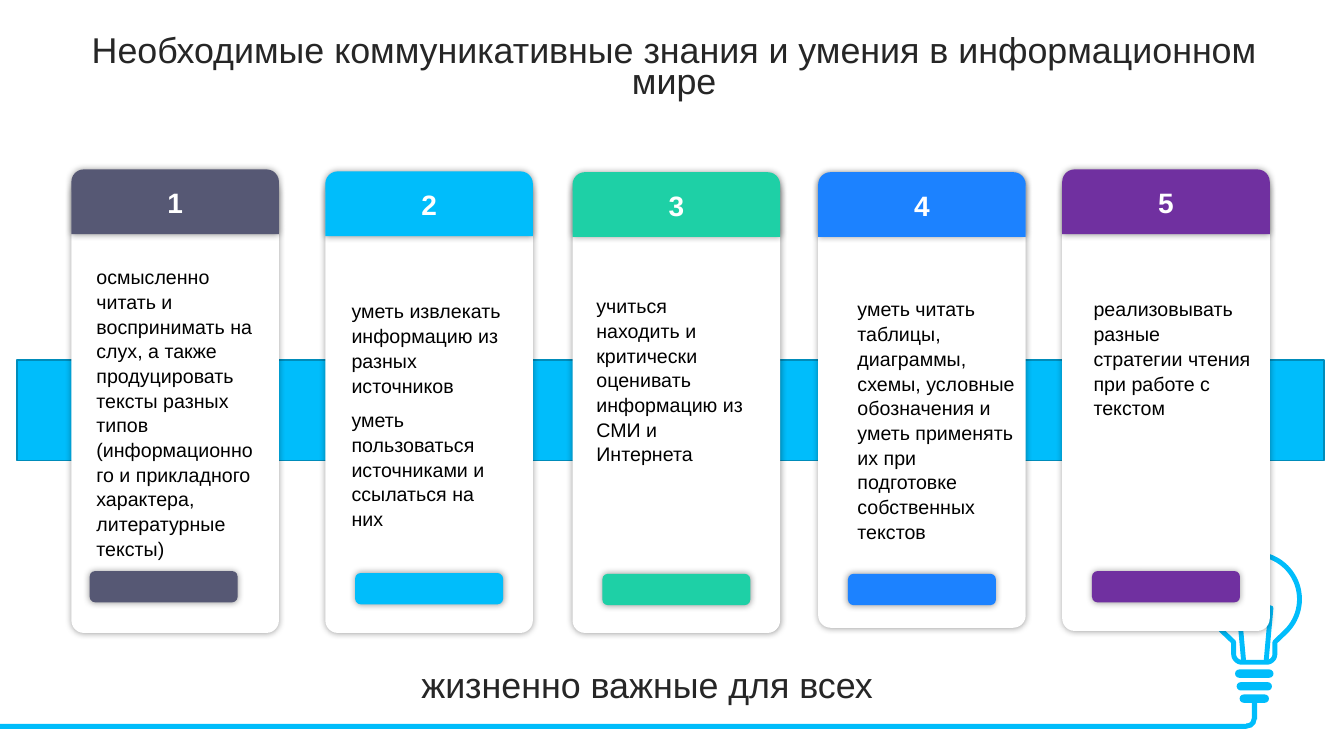
import math

from lxml import etree
from pptx import Presentation
from pptx import util as u
from pptx.dml.color import RGBColor
from pptx.enum import shapes, text
from pptx.oxml.ns import qn

KIND = shapes.MSO_SHAPE
CYAN = "00BDFB"
WHITE = "FFFFFF"

CARDS = [
    (1.80, 4.27, 4.55, 0.46, "565874", [
        (2.18, 6.53, 7.44, "осмысленно читать и воспринимать на слух, а также продуцировать тексты "
         "разных типов (информационного и прикладного характера, литературные тексты)")]),
    (8.20, 4.32, 4.55, 0.75, CYAN, [
        (8.61, 7.39, 2.64, "уметь извлекать информацию из разных источников"),
        (8.61, 10.13, 3.25, "уметь пользоваться источниками и ссылаться на них")]),
    (14.43, 4.34, 4.55, 0.75, "1ED0A6", [
        (14.78, 7.26, 4.45, "учиться находить и критически оценивать информацию из СМИ и Интернета")]),
    (20.62, 4.34, 4.42, 0.75, "1C82FF", [
        (21.36, 7.34, 6.25, "уметь читать таблицы, диаграммы, схемы, условные обозначения "
         "и уметь применять их при подготовке собственных текстов")]),
    (26.77, 4.27, 4.50, 0.75, "7030A0", [
        (27.31, 7.34, 3.25, "реализовывать разные стратегии чтения при работе с текстом")]),
]


def color(value):
    return RGBColor.from_string(value)


def arc(x, y, radius, start, end, steps):
    angles = [math.radians(start + (end - start) * i / steps) for i in range(steps + 1)]
    return [(x + radius * math.cos(a), y + radius * math.sin(a)) for a in angles]


class SlideBuilder:
    font = "Arial"

    def __init__(self, slide):
        self.slide = slide

    def paint(self, shape, fill=None, line=None, width=1):
        shape.shadow.inherit = False
        if fill:
            shape.fill.solid()
            shape.fill.fore_color.rgb = color(fill)
        else:
            shape.fill.background()
        if line:
            shape.line.color.rgb = color(line)
            shape.line.width = u.Pt(width)
        else:
            shape.line.fill.background()

    def shape(self, kind, x, y, width, height, fill, adjustments=(), line=None, shadow=False):
        shape = self.slide.shapes.add_shape(kind, u.Cm(x), u.Cm(y), u.Cm(width), u.Cm(height))
        for index, value in enumerate(adjustments):
            shape.adjustments[index] = value
        self.paint(shape, fill, line)
        if shadow:
            self.add_shadow(shape)

    def add_shadow(self, shape):
        effects = shape._element.spPr.find(qn("a:effectLst"))
        outer = etree.SubElement(effects, qn("a:outerShdw"), blurRad=str(u.Pt(5)),
                                 dist="0", dir="0", algn="ctr", rotWithShape="0")
        black = etree.SubElement(outer, qn("a:srgbClr"), val="000000")
        etree.SubElement(black, qn("a:alpha"), val="40000")

    def outline(self, points, fill=None, close=True):
        corners = [(u.Cm(x), u.Cm(y)) for x, y in points]
        builder = self.slide.shapes.build_freeform(*corners[0])
        builder.add_line_segments(corners[1:], close=close)
        self.paint(builder.convert_to_shape(), fill, CYAN, 3.5)

    def text(self, x, y, width, height, words, size=14, fill="000000", bold=False,
             align=text.PP_ALIGN.LEFT, anchor=text.MSO_ANCHOR.TOP, spacing=1.05, before=0):
        frame = self.slide.shapes.add_textbox(
            u.Cm(x), u.Cm(y), u.Cm(width), u.Cm(height)).text_frame
        frame.word_wrap = True
        frame.vertical_anchor = anchor
        paragraph = frame.paragraphs[0]
        paragraph.alignment = align
        paragraph.line_spacing = spacing
        paragraph.space_before = u.Pt(before)
        run = paragraph.add_run()
        run.text = words
        run.font.name = self.font
        run.font.size = u.Pt(size)
        run.font.bold = bold
        run.font.color.rgb = color(fill)

    def heading(self, x, y, height, words):
        self.text(x, y, 32.16, height, words, 25.6, "262626", align=text.PP_ALIGN.CENTER,
                  anchor=text.MSO_ANCHOR.MIDDLE, spacing=0.7, before=10)

    def bulb(self):
        self.outline(arc(31.61, 15.1, 1.14, 135, 405, 60) + [(32.13, 16.18)]
                     + arc(31.92, 16.48, 0.21, 0, 90, 8)
                     + arc(31.30, 16.48, 0.21, 90, 180, 8) + [(31.09, 16.18)], WHITE)
        for y, width in ((16.87, 0.97), (17.19, 0.89), (17.50, 0.74)):
            self.shape(KIND.ROUNDED_RECTANGLE, 31.61 - width / 2, y, width, 0.21, CYAN, [0.5])
        self.outline([(31.34, 16.65), (31.22, 15.32), (32.03, 15.32), (31.91, 16.65)], close=False)
        self.shape(KIND.RECTANGLE, 0, 18.24, 31.42, 0.13, CYAN)
        self.shape(KIND.RECTANGLE, 31.55, 17.70, 0.13, 0.43, CYAN)
        self.shape(KIND.BLOCK_ARC, 31.19, 17.88, 0.48, 0.48, CYAN, [213.39, 60.92, 0.27])

    def card(self, number, x, top, body_top, button_offset, fill, notes):
        self.shape(KIND.ROUNDED_RECTANGLE, x, body_top, 5.23, 11.4, WHITE, [0.06], shadow=True)
        self.shape(KIND.ROUND_2_SAME_RECTANGLE, x, top, 5.23, 1.63, fill, [0.19, 0], shadow=True)
        self.shape(KIND.ROUNDED_RECTANGLE, x + button_offset, top + 10.12, 3.73, 0.79,
                   fill, [0.18], shadow=True)
        self.text(x + 1.37, top + 0.28, 2.49, 1.12, str(number), 20, WHITE, True,
                  text.PP_ALIGN.CENTER, spacing=1)
        for left, note_top, height, words in notes:
            self.text(left, note_top, 4.5, height, words)


def main():
    presentation = Presentation()
    presentation.slide_width = u.Cm(33.87)
    presentation.slide_height = u.Cm(19.05)
    builder = SlideBuilder(presentation.slides.add_slide(presentation.slide_layouts[6]))
    builder.bulb()
    builder.shape(KIND.RECTANGLE, 0.43, 9.07, 32.94, 2.54, CYAN, line="008CBA")
    builder.heading(0.91, 0.76, 2.01,
                    "Необходимые коммуникативные знания и умения в информационном мире")
    for number, card in enumerate(CARDS, 1):
        builder.card(number, *card)
    builder.heading(0.23, 16.84, 1.07, "жизненно важные для всех")
    presentation.save("out.pptx")


if __name__ == "__main__":
    main()
